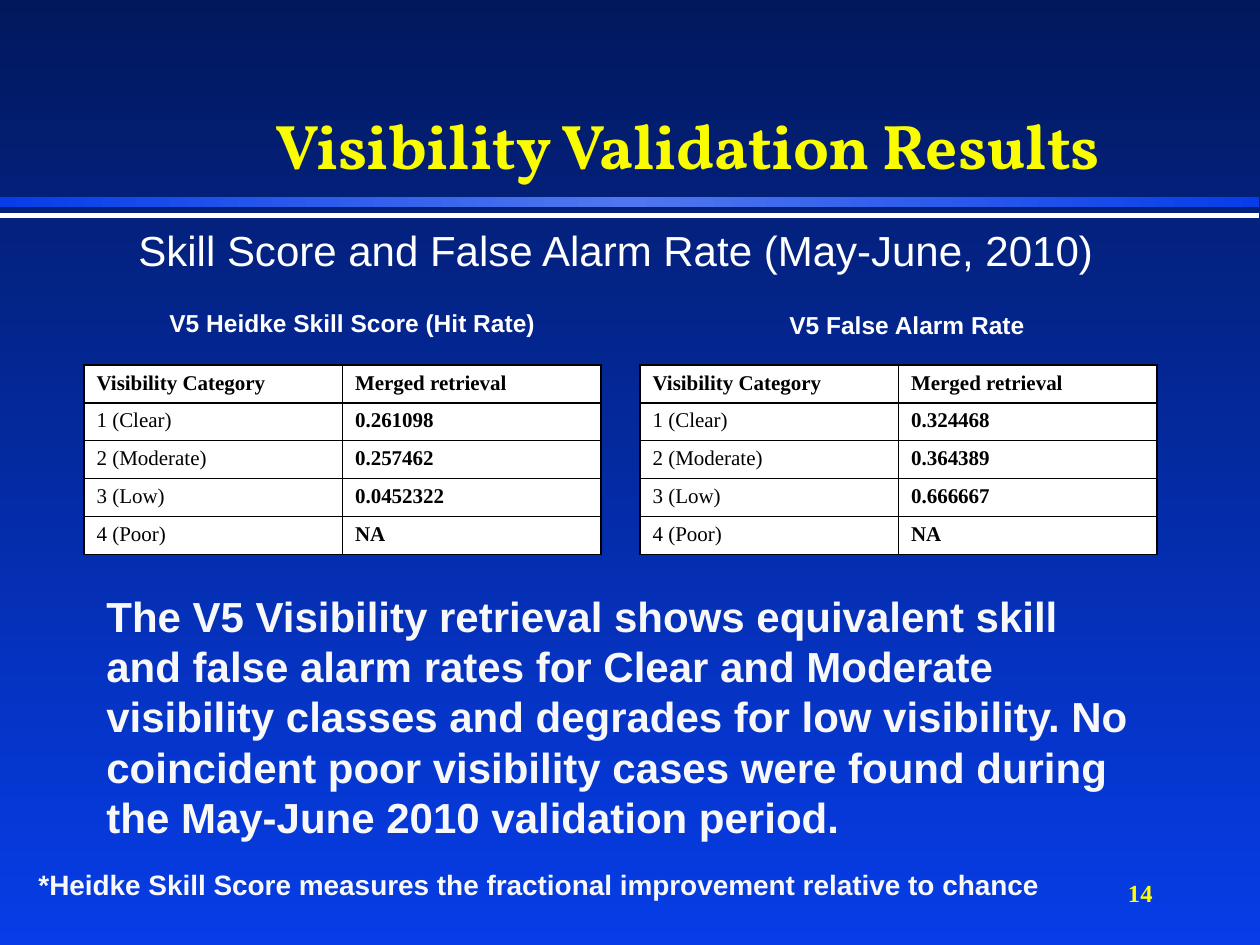
from copy import deepcopy
from dataclasses import dataclass

from lxml.etree import SubElement
from pptx import Presentation
from pptx.dml.color import RGBColor
from pptx.enum.shapes import MSO_SHAPE as Shape
from pptx.enum.text import MSO_ANCHOR as Anchor, MSO_AUTO_SIZE as Fit, PP_ALIGN as Align
from pptx.oxml.ns import qn
from pptx.util import Pt

SCALE = 914400 / 126
SERIF, SANS = "Times New Roman", "Arial"
WHITE, BLACK, PALE, BLUE = "FFFFFF", "000000", "F8F8F8", "063DE8"
CLASSES = ("1 (Clear)", "2 (Moderate)", "3 (Low)", "4 (Poor)")


@dataclass
class Box:
    """A rectangle in px."""
    left: int
    top: int
    width: int
    height: int

    def emu(self) -> list[int]:
        """Return the four lengths in EMU."""
        return [px(n) for n in (self.left, self.top, self.width, self.height)]


@dataclass
class Panel:
    """A captioned table of scores."""
    title: str
    label: Box
    grid: Box
    scores: tuple[str, ...]


def px(n: int) -> int:
    """Turn px into EMU."""
    return round(n * SCALE)


def color(code: str) -> RGBColor:
    """Turn a hex string into a colour."""
    return RGBColor.from_string(code)


def shade(fill, root, codes: tuple[str, ...], angle: int) -> None:
    """Fill with evenly spaced gradient stops."""
    fill.gradient()
    fill.gradient_angle = angle
    stops = next(root.iter(qn("a:gsLst")))
    while len(stops) < len(codes):
        stops.append(deepcopy(stops[0]))
    for i, (stop, code) in enumerate(zip(fill.gradient_stops, codes)):
        stop.color.rgb = color(code)
        stop.position = i / (len(codes) - 1)


def style(frame, text: str, *, size: int, font: str = SANS, code: str = WHITE,
          bold: bool = True, align=Align.LEFT, space: float = 1.0) -> None:
    """Write one formatted paragraph into a text frame."""
    para = frame.paragraphs[0]
    para.alignment, para.line_spacing = align, space
    run = para.add_run()
    run.text = text
    face = run.font
    face.name, face.size, face.bold = font, Pt(size), bold
    face.color.rgb = color(code)


def write(slide, box: Box, text: str, *, wrap: bool = False, fit=Fit.SHAPE_TO_FIT_TEXT,
          anchor=Anchor.MIDDLE, **form) -> None:
    """Add a text box."""
    frame = slide.shapes.add_textbox(*box.emu()).text_frame
    frame.word_wrap, frame.auto_size, frame.vertical_anchor = wrap, fit, anchor
    style(frame, text, **form)


def bar(slide, box: Box, *codes: str) -> None:
    """Add a band in one colour or a gradient."""
    band = slide.shapes.add_shape(Shape.RECTANGLE, *box.emu())
    band.shadow.inherit = False
    band.line.fill.background()
    if len(codes) > 1:
        shade(band.fill, band._element.spPr, codes, 0)
    else:
        band.fill.solid()
        band.fill.fore_color.rgb = color(codes[0])


def edge(cell) -> None:
    """Draw thin black borders round a cell."""
    props = cell._tc.get_or_add_tcPr()
    for i, side in enumerate(("lnL", "lnR", "lnT", "lnB")):
        line = SubElement(props, qn(f"a:{side}"), w=str(Pt(1)))
        props.insert(i, line)
        paint = SubElement(line, qn("a:solidFill"))
        SubElement(paint, qn("a:srgbClr"), val=BLACK)


def draw(slide, panel: Panel) -> None:
    """Add a caption and its table."""
    write(slide, panel.label, panel.title, size=14)
    rows = [("Visibility Category", "Merged retrieval"), *zip(CLASSES, panel.scores)]
    table = slide.shapes.add_table(len(rows), 2, *panel.grid.emu()).table
    for r, row in enumerate(rows):
        for c, text in enumerate(row):
            cell = table.cell(r, c)
            cell.fill.solid()
            cell.fill.fore_color.rgb = color(WHITE)
            edge(cell)
            style(cell.text_frame, text, size=12, font=SERIF, code=BLACK,
                  bold=r == 0 or c == 1)


def main() -> None:
    """Build and save the slide."""
    deck = Presentation()
    deck.slide_width, deck.slide_height = px(1260), px(945)
    slide = deck.slides.add_slide(deck.slide_layouts[6])
    ground = slide.background.fill
    shade(ground, slide._element, ("02185D", BLUE), 270)

    bar(slide, Box(0, 197, 1259, 10), BLUE, "5077EF", BLUE)
    bar(slide, Box(0, 213, 1259, 5), WHITE)
    write(slide, Box(147, 32, 1081, 157), "Visibility Validation Results", wrap=True,
          fit=Fit.NONE, anchor=Anchor.BOTTOM, size=36, font="Vollkorn", code="FAFD00",
          align=Align.CENTER, space=0.85)
    write(slide, Box(126, 218, 990, 64),
          "Skill Score and False Alarm Rate (May-June, 2010)", size=24, bold=False)

    for panel in (
        Panel("V5 Heidke Skill Score (Hit Rate)", Box(157, 301, 393, 43),
              Box(84, 365, 517, 189), ("0.261098", "0.257462", "0.0452322", "NA")),
        Panel("V5 False Alarm Rate", Box(777, 303, 262, 43),
              Box(640, 365, 517, 189), ("0.324468", "0.364389", "0.666667", "NA")),
    ):
        draw(slide, panel)

    write(slide, Box(94, 584, 1050, 267),
          "The V5 Visibility retrieval shows equivalent skill and false alarm rates for "
          "Clear and Moderate visibility classes and degrades for low visibility. No "
          "coincident poor visibility cases were found during the May-June 2010 "
          "validation period.", wrap=True, anchor=Anchor.TOP, size=24, code=PALE)
    write(slide, Box(26, 861, 1029, 47),
          "*Heidke Skill Score measures the fractional improvement relative to chance",
          anchor=Anchor.TOP, size=16, code=PALE)
    write(slide, Box(903, 861, 262, 63), "14", wrap=True, fit=Fit.NONE, size=14,
          font=SERIF, code="FFFF00", align=Align.RIGHT)
    deck.save("out.pptx")


if __name__ == "__main__":
    main()
